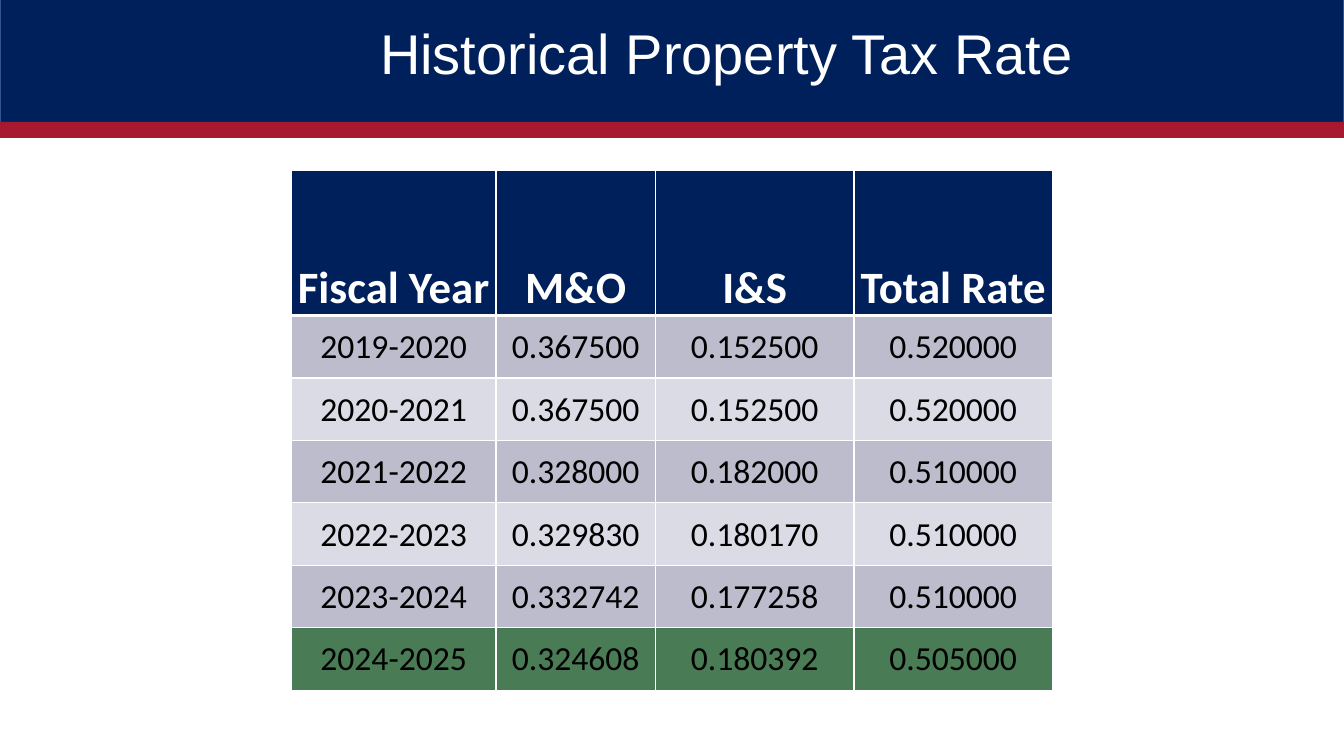
from pptx import Presentation
from pptx.dml.color import RGBColor
from pptx.enum.shapes import MSO_SHAPE
from pptx.enum.text import MSO_ANCHOR, PP_ALIGN
from pptx.oxml.ns import qn
from pptx.util import Inches, Pt
from lxml import etree

# Content
TITLE = "Historical Property Tax Rate"
HEADERS = ("Fiscal Year", "M&O", "I&S", "Total Rate")
RATES = [
    ("2019-2020", "0.367500", "0.152500", "0.520000"),
    ("2020-2021", "0.367500", "0.152500", "0.520000"),
    ("2021-2022", "0.328000", "0.182000", "0.510000"),
    ("2022-2023", "0.329830", "0.180170", "0.510000"),
    ("2023-2024", "0.332742", "0.177258", "0.510000"),
    ("2024-2025", "0.324608", "0.180392", "0.505000"),
]

# Theme
THEME = {
    "navy": "00205B", "navy_edge": "325491", "red": "A6192E",
    "white": "FFFFFF", "black": "000000", "green": "497B55",
    "stripes": ("BDBCCD", "DBDBE5"),
    "title_size": 40, "header_size": 32, "rate_size": 24,
    "title_font": "Arial", "table_font": "Calibri",
}
RECTANGLE = MSO_SHAPE.RECTANGLE
LEFT, CENTER = PP_ALIGN.LEFT, PP_ALIGN.CENTER
MIDDLE, BOTTOM = MSO_ANCHOR.MIDDLE, MSO_ANCHOR.BOTTOM

# Layout in inches
SLIDE_SIZE = (13.33, 7.5)
BANDS = [
    (-0.01, 1.23, THEME["navy"], THEME["navy_edge"]),
    (1.21, 0.16, THEME["red"], None),
]
TITLE_BOX = (3.67, 0.12, 11.5, 0.87)
TABLE_LEFT, TABLE_TOP = 2.89, 1.69
COLUMN_WIDTHS = (2.03, 1.58, 1.97, 1.97)
HEADER_HEIGHT, RATE_HEIGHT = 1.44, 0.62


def color(code):
    return RGBColor.from_string(code)


def format_text(para, align, font_name, size, code, bold=False):
    para.alignment = align
    values = {"name": font_name, "size": Pt(size), "bold": bold}
    for span in para.runs:
        for name, value in values.items():
            setattr(span.font, name, value)
        span.font.color.rgb = color(code)


def add_band(page, top, height, fill, edge):
    band = page.shapes.add_shape(
        RECTANGLE, 0, Inches(top), Inches(SLIDE_SIZE[0]), Inches(height))
    band.shadow.inherit = False
    band.fill.solid()
    band.fill.fore_color.rgb = color(fill)
    if edge:
        band.line.color.rgb = color(edge)
        band.line.width = Pt(1)
    else:
        band.line.fill.background()


def add_borders(cell, bottom_width):
    properties = cell._tc.get_or_add_tcPr()
    widths = {"a:lnL": 1, "a:lnR": 1, "a:lnT": 1, "a:lnB": bottom_width}
    for side, width in widths.items():
        line = etree.SubElement(properties, qn(side), w=str(Pt(width)))
        fill = etree.SubElement(line, qn("a:solidFill"))
        etree.SubElement(fill, qn("a:srgbClr"), val=THEME["white"])


def fill_cell(cell, text, row):
    is_header = row == 0
    if is_header:
        background = THEME["navy"]
    elif row == len(RATES):
        background = THEME["green"]
    else:
        background = THEME["stripes"][(row - 1) % 2]
    values = {
        "text": text,
        "vertical_anchor": BOTTOM if is_header else MIDDLE,
        "margin_left": Inches(0.01), "margin_top": Inches(0.01),
        "margin_right": Inches(0.01), "margin_bottom": 0,
    }
    for name, value in values.items():
        setattr(cell, name, value)
    add_borders(cell, 3 if is_header else 1)
    cell.fill.solid()
    cell.fill.fore_color.rgb = color(background)
    format_text(
        cell.text_frame.paragraphs[0], CENTER, THEME["table_font"],
        THEME["header_size" if is_header else "rate_size"],
        THEME["white" if is_header else "black"], is_header)


def add_rate_table(page):
    rows = [HEADERS] + RATES
    heights = [HEADER_HEIGHT] + [RATE_HEIGHT] * len(RATES)
    frame = page.shapes.add_table(
        len(rows), len(HEADERS), Inches(TABLE_LEFT), Inches(TABLE_TOP),
        Inches(sum(COLUMN_WIDTHS)), Inches(sum(heights)))
    table = frame.table
    for column, width in zip(table.columns, COLUMN_WIDTHS):
        column.width = Inches(width)
    for row, (texts, height) in enumerate(zip(rows, heights)):
        table.rows[row].height = Inches(height)
        for column, text in enumerate(texts):
            fill_cell(table.cell(row, column), text, row)


def add_title(page):
    title = page.shapes.title
    title.left, title.top, title.width, title.height = map(Inches, TITLE_BOX)
    frame = title.text_frame
    frame.text = TITLE
    frame.word_wrap = True
    frame.vertical_anchor = MIDDLE
    para = frame.paragraphs[0]
    para.line_spacing = 0.9
    format_text(para, LEFT, THEME["title_font"], THEME["title_size"],
                THEME["white"])
    # Bring the title in front of the bands
    title._element.getparent().append(title._element)


def main():
    deck = Presentation()
    deck.slide_width, deck.slide_height = map(Inches, SLIDE_SIZE)
    page = deck.slides.add_slide(deck.slide_layouts[5])

    # Header bands and title
    for band in BANDS:
        add_band(page, *band)
    add_title(page)

    # Tax rates
    add_rate_table(page)
    deck.save("out.pptx")


if __name__ == "__main__":
    main()
